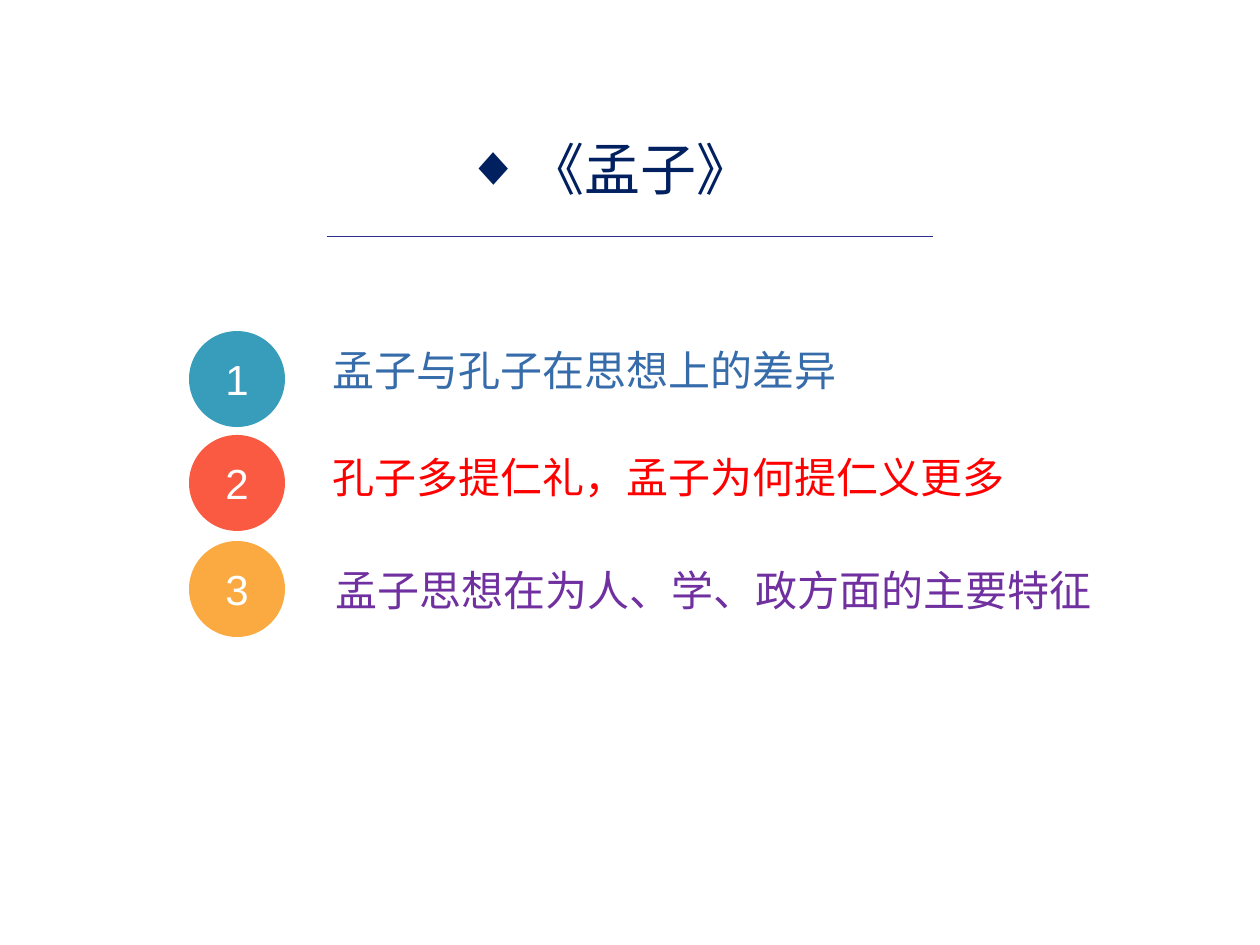
from typing import NamedTuple

from lxml.etree import SubElement
from pptx import Presentation
from pptx.dml.color import RGBColor
from pptx.enum.shapes import MSO_CONNECTOR, MSO_SHAPE
from pptx.enum.text import MSO_ANCHOR, PP_ALIGN
from pptx.oxml.ns import qn
from pptx.util import Emu, Pt

PX_PER_INCH = 126
LATIN_FONT = "Arial"
CJK_FONT = "Noto Sans CJK SC"

WHITE = RGBColor(0xFF, 0xFF, 0xFF)
NAVY = RGBColor(0x00, 0x20, 0x60)
INDIGO = RGBColor(0x2D, 0x2D, 0x8A)
TEAL = RGBColor(0x38, 0x9D, 0xBA)
CORAL = RGBColor(0xFA, 0x5A, 0x41)
AMBER = RGBColor(0xFA, 0xAA, 0x41)
BLUE = RGBColor(0x36, 0x6C, 0xAA)
RED = RGBColor(0xFF, 0x00, 0x00)
PURPLE = RGBColor(0x70, 0x30, 0xA0)

CIRCLE_LEFT, CIRCLE_SIZE = 189, 96
TOPIC_WIDTH, TOPIC_HEIGHT = 853, 72


class Topic(NamedTuple):
    text: str
    circle_top: int
    circle_color: RGBColor
    text_left: int
    text_top: int
    text_color: RGBColor


TOPICS = [
    Topic("孟子与孔子在思想上的差异", 331, TEAL, 320, 338, BLUE),
    Topic("孔子多提仁礼，孟子为何提仁义更多", 435, CORAL, 320, 445, RED),
    Topic("孟子思想在为人、学、政方面的主要特征", 541, AMBER, 323, 558, PURPLE),
]


def px(n: int) -> Emu:
    return Emu(round(n * 914400 / PX_PER_INCH))


def format_run(p, size: int, color: RGBColor, font: str) -> None:
    r = p.runs[0]
    r.font.size = Pt(size)
    r.font.color.rgb = color
    r.font.name = font
    SubElement(r._r.get_or_add_rPr(), qn("a:ea"), typeface=CJK_FONT)


def add_title(slide, text: str) -> None:
    sp = slide.shapes.title
    sp.left, sp.top, sp.width, sp.height = px(112), px(112), px(995), px(113)
    tf = sp.text_frame
    tf.text = text
    tf.vertical_anchor = MSO_ANCHOR.MIDDLE
    p = tf.paragraphs[0]
    p.alignment = PP_ALIGN.CENTER
    pPr = p._p.get_or_add_pPr()
    pPr.set("marL", str(px(63)))
    pPr.set("indent", str(px(-63)))
    SubElement(pPr, qn("a:buFont"), typeface=LATIN_FONT)
    SubElement(pPr, qn("a:buChar"), char="◆")
    format_run(p, 32, NAVY, LATIN_FONT)


def add_rule(slide, left: int, right: int, y: int) -> None:
    line = slide.shapes.add_connector(
        MSO_CONNECTOR.STRAIGHT, px(left), px(y), px(right), px(y))
    line.line.color.rgb = INDIGO
    line.line.width = Pt(0.5)
    SubElement(line._element.spPr, qn("a:effectLst"))


def add_topic(slide, number: int, topic: Topic) -> None:
    sp = slide.shapes.add_shape(
        MSO_SHAPE.OVAL, px(CIRCLE_LEFT), px(topic.circle_top),
        px(CIRCLE_SIZE), px(CIRCLE_SIZE))
    sp.shadow.inherit = False
    sp.fill.solid()
    sp.fill.fore_color.rgb = topic.circle_color
    sp.line.fill.background()
    tf = sp.text_frame
    tf.text = str(number)
    tf.word_wrap = False
    tf.vertical_anchor = MSO_ANCHOR.MIDDLE
    tf.paragraphs[0].alignment = PP_ALIGN.CENTER
    format_run(tf.paragraphs[0], 24, WHITE, LATIN_FONT)

    box = slide.shapes.add_textbox(
        px(topic.text_left), px(topic.text_top),
        px(TOPIC_WIDTH), px(TOPIC_HEIGHT))
    tf = box.text_frame
    tf.word_wrap = True
    tf.text = topic.text
    format_run(tf.paragraphs[0], 24, topic.text_color, CJK_FONT)


def main() -> None:
    prs = Presentation()
    prs.slide_width, prs.slide_height = px(1260), px(945)
    slide = prs.slides.add_slide(prs.slide_layouts[5])
    add_title(slide, "《孟子》")
    add_rule(slide, 327, 933, 236)
    for number, topic in enumerate(TOPICS, start=1):
        add_topic(slide, number, topic)
    prs.save("out.pptx")


if __name__ == "__main__":
    main()
